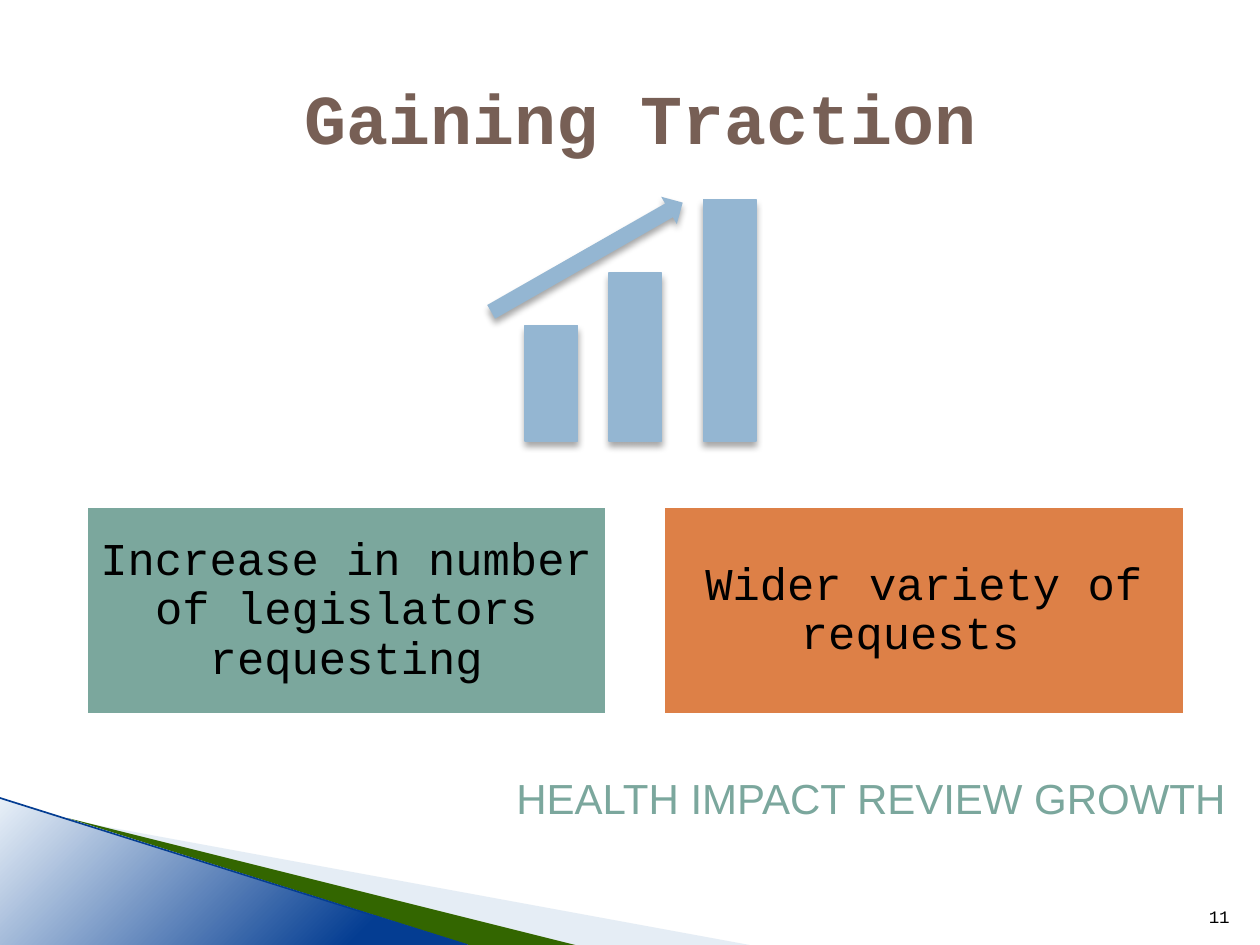
import pptx
import pptx.dml.color
import pptx.enum.shapes
import pptx.enum.text
import pptx.oxml
import pptx.util

RGB = pptx.dml.color.RGBColor
SHAPE = pptx.enum.shapes.MSO_SHAPE
ALIGN = pptx.enum.text.PP_ALIGN
ANCHOR = pptx.enum.text.MSO_ANCHOR
Pt = pptx.util.Pt

BLACK = RGB(0x00, 0x00, 0x00)
WHITE = RGB(0xFF, 0xFF, 0xFF)
NAVY = RGB(0x04, 0x3D, 0x92)
ICE = RGB(0xE8, 0xF0, 0xF8)
MIST = RGB(0xC0, 0xD3, 0xE6)
GREEN = RGB(0x33, 0x66, 0x00)
BROWN = RGB(0x77, 0x5F, 0x55)
SKY = RGB(0x94, 0xB6, 0xD2)
SAGE = RGB(0x7B, 0xA7, 0x9D)
ORANGE = RGB(0xDD, 0x80, 0x47)

COLS, ROWS = 120, 90
NS = 'xmlns:a="http://schemas.openxmlformats.org/drawingml/2006/main"'
SHADOW = (f'<a:effectLst {NS}><a:outerShdw blurRad="50800" dist="38100" dir="5400000" '
          'rotWithShape="0"><a:srgbClr val="000000"><a:alpha val="35000"/></a:srgbClr>'
          '</a:outerShdw></a:effectLst>')


def write(tf, text, size=26, font="Courier New", color=BLACK, bold=False,
          align=ALIGN.CENTER, anchor=ANCHOR.MIDDLE, spacing=None, inset=None):
    tf.word_wrap = True
    tf.vertical_anchor = anchor
    if inset is not None:
        tf.margin_left = tf.margin_right = tf.margin_top = tf.margin_bottom = inset
    p = tf.paragraphs[0]
    p.alignment = align
    p.line_spacing = spacing
    r = p.add_run()
    r.text = text
    r.font.size, r.font.name, r.font.bold = Pt(size), font, bold
    r.font.color.rgb = color


class Deck:
    """Draws styled elements on the current slide in grid units."""

    def __init__(self):
        self.prs = pptx.Presentation()
        self.prs.slide_width = pptx.util.Inches(10)
        self.prs.slide_height = pptx.util.Inches(7.5)
        self.s = self.prs.slides.add_slide(self.prs.slide_layouts[6])

    def grid(self, *lengths):
        units = (self.prs.slide_width / COLS, self.prs.slide_height / ROWS)
        return [round(v * units[i % 2]) for i, v in enumerate(lengths)]

    def shape(self, kind, at, fill, line=None, width=0.75, rotation=0, shadow=False):
        sp = self.s.shapes.add_shape(kind, *self.grid(*at))
        sp.shadow.inherit = False
        sp.rotation = rotation
        sp.fill.solid()
        sp.fill.fore_color.rgb = fill
        if line is None:
            sp.line.fill.background()
        else:
            sp.line.color.rgb = line
            sp.line.width = Pt(width)
        if shadow:
            props = sp.element.spPr
            props.remove(props.find(pptx.oxml.ns.qn("a:effectLst")))
            props.append(pptx.oxml.parse_xml(SHADOW))
        return sp

    def polygon(self, points, fill, alpha=None):
        points = [self.grid(*point) for point in points]
        builder = self.s.shapes.build_freeform(*points[0])
        builder.add_line_segments(points[1:], close=True)
        sp = builder.convert_to_shape()
        sp.shadow.inherit = False
        sp.fill.solid()
        sp.fill.fore_color.rgb = fill
        sp.line.fill.background()
        if alpha is not None:
            color = sp.element.spPr.find(".//" + pptx.oxml.ns.qn("a:srgbClr"))
            color.append(pptx.oxml.parse_xml(f'<a:alpha {NS} val="{alpha * 1000}"/>'))

    def gradient_triangle(self, at, start, end):
        sp = self.shape(SHAPE.RIGHT_TRIANGLE, at, start)
        sp.fill.gradient()
        sp.fill.gradient_angle = 315
        for stop, color, position in zip(sp.fill.gradient_stops, (start, end), (0, 0.81)):
            stop.color.rgb = color
            stop.position = position

    def line(self, ends, color, width):
        c = self.s.shapes.add_connector(
            pptx.enum.shapes.MSO_CONNECTOR.STRAIGHT, *self.grid(*ends))
        c.line.color.rgb = color
        c.line.width = Pt(width)
        c.element.spPr.append(pptx.oxml.parse_xml(f"<a:effectLst {NS}/>"))

    def text(self, at, text, **style):
        write(self.s.shapes.add_textbox(*self.grid(*at)).text_frame, text, **style)

    def card(self, at, text, fill):
        sp = self.shape(SHAPE.RECTANGLE, at, fill, WHITE, 4.33)
        write(sp.text_frame, text, spacing=0.9, inset=pptx.util.Inches(0.11))


def main():
    deck = Deck()
    deck.polygon([(6.6, 78.1), (71.4, 90), (54.7, 90), (6.6, 78)], MIST, 40)
    deck.polygon([(6.4, 77.9), (54.8, 90), (44.6, 90)], GREEN)
    deck.gradient_triangle((0, 76, 44.5, 14), ICE, NAVY)
    deck.line((0, 76, 44.5, 90), NAVY, 0.95)

    deck.text((8, 3.6, 106, 15), "Gaining Traction", size=40, color=BROWN, bold=True)

    deck.shape(SHAPE.RIGHT_ARROW, (45.4, 23, 21, 3), SKY, rotation=330.3, shadow=True)
    base = 42
    for left, height in ((50, 11), (58, 16), (67, 23)):
        deck.shape(SHAPE.RECTANGLE, (left, base - height, 5, height), SKY, SKY, shadow=True)

    cards = (("Increase in number of legislators requesting", SAGE),
             ("Wider variety of requests ", ORANGE))
    for i, (text, fill) in enumerate(cards):
        deck.card((8 + 55 * i, 48, 50, 20.25), text, fill)

    deck.text((48, 73, 70, 6), "HEALTH IMPACT REVIEW GROWTH", size=24, font="Arial",
              color=SAGE, align=ALIGN.LEFT, anchor=ANCHOR.TOP)
    deck.text((113.5, 84.1, 4.8, 4.8), "11", size=10, align=ALIGN.RIGHT,
              anchor=ANCHOR.BOTTOM)
    deck.prs.save("out.pptx")


if __name__ == "__main__":
    main()
